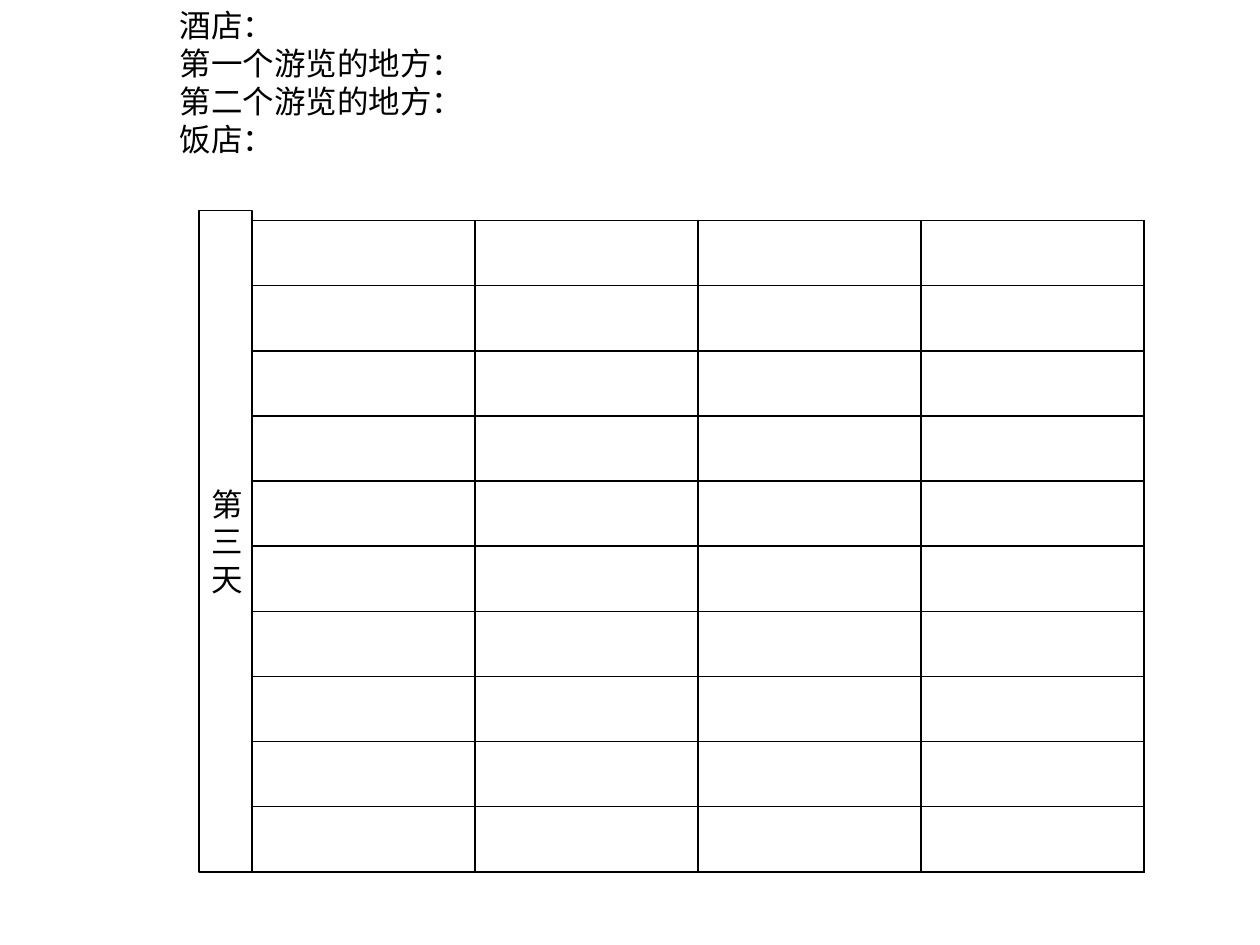
from lxml.etree import SubElement
from pptx import Presentation
from pptx.dml.color import RGBColor
from pptx.enum.text import MSO_ANCHOR
from pptx.oxml.ns import qn
from pptx.util import Inches, Pt

COLORS = {"ink": "000000"}


class SlideBuilder:
    font_name = "Calibri"
    font_size = 18

    def __init__(self, slide):
        self.slide = slide

    def write_lines(self, shape, lines):
        text_frame = shape.text_frame
        text_frame.word_wrap = True
        text_frame.text = "\n".join(lines)
        for paragraph in text_frame.paragraphs:
            for run in paragraph.runs:
                run.font.name = self.font_name
                run.font.size = Pt(self.font_size)
                run.font.color.rgb = RGBColor.from_string(COLORS["ink"])

    def add_text(self, left, top, width, height, lines):
        shape = self.slide.shapes.add_textbox(
            Inches(left), Inches(top), Inches(width), Inches(height))
        self.write_lines(shape, lines)
        return shape

    def add_day_label(self, left, top, width, height, label):
        shape = self.add_text(left, top, width, height, label)
        shape.text_frame.vertical_anchor = MSO_ANCHOR.MIDDLE
        shape.line.color.rgb = RGBColor.from_string(COLORS["ink"])
        shape.line.width = Pt(0.75)

    def add_grid(self, left, top, width, height, rows, columns):
        table = self.slide.shapes.add_table(
            rows, columns, Inches(left), Inches(top),
            Inches(width), Inches(height)).table
        table.first_row = False
        table.horz_banding = False
        for cell in table.iter_cells():
            self.add_borders(cell)
            cell.fill.background()

    def add_borders(self, cell):
        properties = cell._tc.get_or_add_tcPr()
        for side in ("L", "R", "T", "B"):
            border = SubElement(properties, qn(f"a:ln{side}"), w=str(Pt(1)))
            fill = SubElement(border, qn("a:solidFill"))
            SubElement(fill, qn("a:srgbClr"), val=COLORS["ink"])


def main():
    presentation = Presentation()
    presentation.slide_width = Inches(10)
    presentation.slide_height = Inches(7.5)
    slide = presentation.slides.add_slide(presentation.slide_layouts[6])

    builder = SlideBuilder(slide)
    builder.add_grid(2, 1.75, 7.08, 5.17, rows=10, columns=4)
    builder.add_day_label(1.58, 1.67, 0.42, 5.25, "第三天")
    builder.add_text(1.33, 0, 5, 1.31, [
        "酒店：",
        "第一个游览的地方：",
        "第二个游览的地方：",
        "饭店：",
    ])
    presentation.save("out.pptx")


if __name__ == "__main__":
    main()
